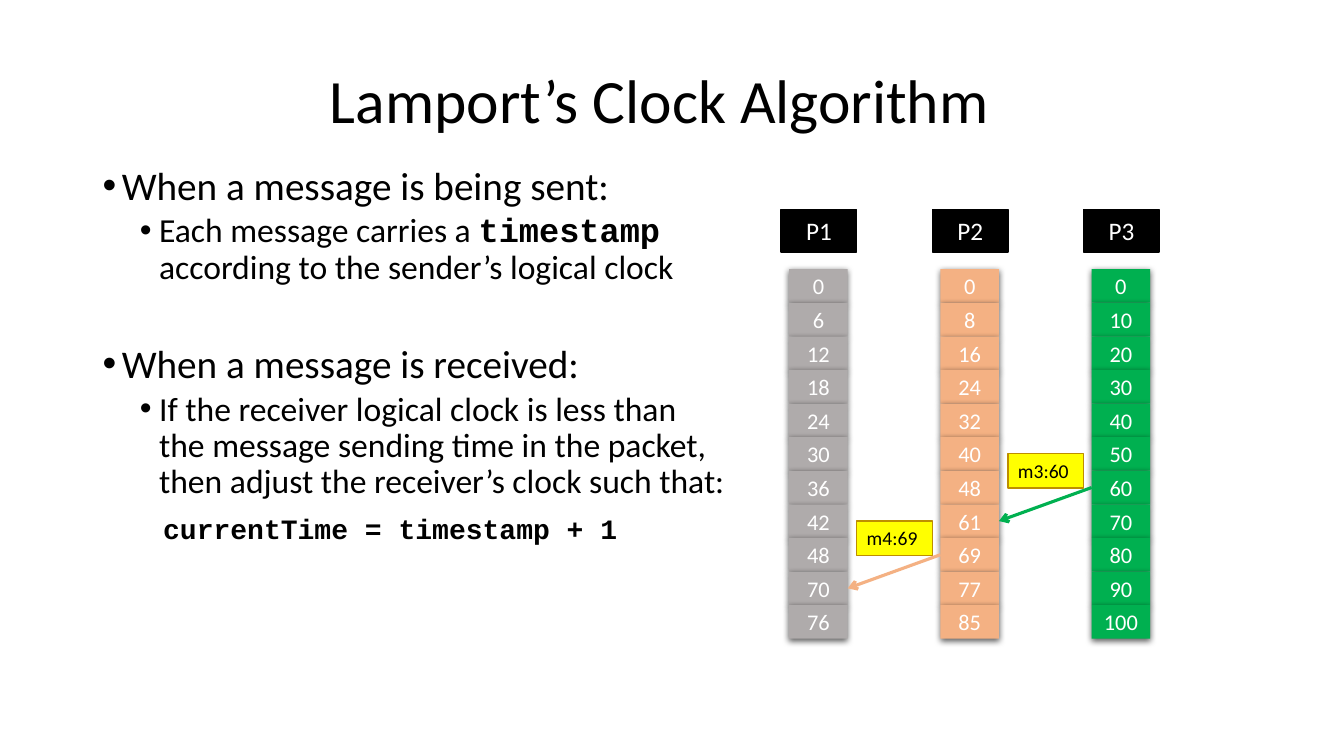
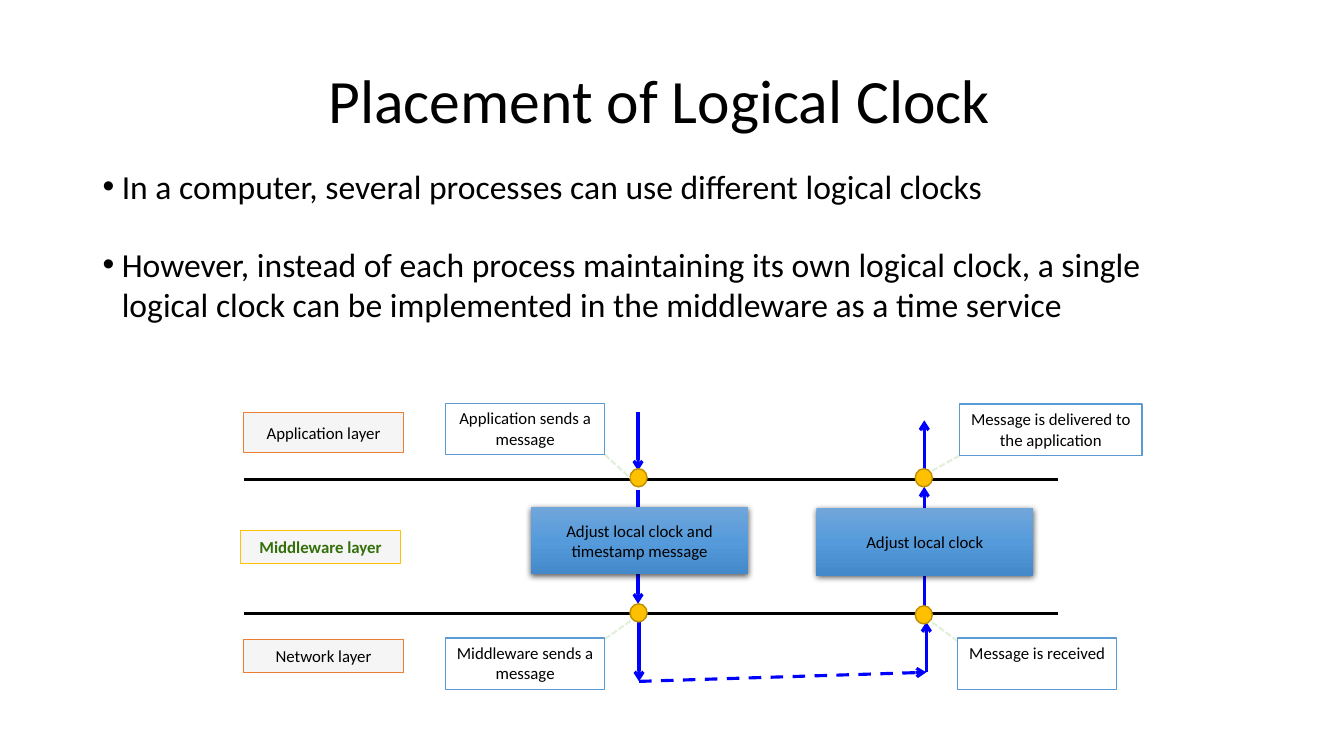
"""Build two slides on Lamport's logical clocks."""
from dataclasses import dataclass

from lxml import etree
from pptx import Presentation
from pptx.dml.color import RGBColor
from pptx.enum.dml import MSO_LINE
from pptx.enum.shapes import MSO_CONNECTOR, MSO_SHAPE
from pptx.enum.text import MSO_ANCHOR, PP_ALIGN
from pptx.oxml.ns import qn
from pptx.shapes.autoshape import Shape
from pptx.shapes.connector import Connector
from pptx.slide import Slide
from pptx.util import Emu, Inches, Pt

RECT, OVAL = MSO_SHAPE.RECTANGLE, MSO_SHAPE.OVAL
STRAIGHT = MSO_CONNECTOR.STRAIGHT
LEFT, CENTER = PP_ALIGN.LEFT, PP_ALIGN.CENTER
TOP, MIDDLE = MSO_ANCHOR.TOP, MSO_ANCHOR.MIDDLE
DASH, DOTS = MSO_LINE.DASH, MSO_LINE.SQUARE_DOT

SANS, MONO = "Calibri", "Courier New"
BLACK, WHITE, BLUE = "000000", "FFFFFF", "0000FF"
GOLD, OCHRE, ORANGE = "FFC000", "BD8E00", "ED7D31"
GRAY, PEACH, GREEN = "AFABAB", "F4B183", "00B050"
PALE, YELLOW, SKY = "F5F5F5", "FFFF00", "5B9BD5"
MOSS, MINT = "336F0A", "E2F0D9"
GRADE = ((0, "71A6DB"), (50, "559BDB"), (100, "448ACA"))
HANG = 0.19


@dataclass(frozen=True)
class Span:
    text: str
    code: bool = False


@dataclass(frozen=True)
class Item:
    spans: tuple[Span, ...]
    size: float
    left: float = HANG
    before: float = 0
    bullet: bool = True


@dataclass(frozen=True)
class Box:
    text: str
    x: float
    y: float
    w: float
    h: float
    fill: str | None
    line: str | None = None
    width: float = 1
    size: float = 12
    color: str = BLACK
    bold: bool = False
    align: PP_ALIGN = CENTER
    anchor: MSO_ANCHOR = MIDDLE
    shadow: bool = False
    form: MSO_SHAPE = RECT


@dataclass(frozen=True)
class Line:
    x1: float
    y1: float
    x2: float
    y2: float
    color: str = BLUE
    width: float = 2.25
    dash: MSO_LINE | None = None
    arrow: bool = True


@dataclass(frozen=True)
class Column:
    name: str
    color: str
    ticks: tuple[int, ...]


def rgb(code: str) -> RGBColor:
    return RGBColor.from_string(code)


def style(font, size: float, color: str, bold: bool = False, face: str = SANS) -> None:
    font.name, font.size, font.bold = face, Pt(size), bold
    font.color.rgb = rgb(color)


def cast(shape: Shape) -> None:
    effects = shape._element.spPr.find(qn("a:effectLst"))
    outer = etree.SubElement(effects, qn("a:outerShdw"), blurRad=str(Pt(4.5)),
                             dist=str(Pt(1.5)), dir="5400000", algn="ctr", rotWithShape="0")
    tint = etree.SubElement(outer, qn("a:srgbClr"), val=BLACK)
    etree.SubElement(tint, qn("a:alpha"), val="63000")


def grade(shape: Shape) -> None:
    grad = etree.Element(qn("a:gradFill"), rotWithShape="1")
    stops = etree.SubElement(grad, qn("a:gsLst"))
    for place, code in GRADE:
        stop = etree.SubElement(stops, qn("a:gs"), pos=str(place * 1000))
        etree.SubElement(stop, qn("a:srgbClr"), val=code)
    etree.SubElement(grad, qn("a:lin"), ang="5400000", scaled="0")
    shape._element.spPr.find(qn("a:prstGeom")).addnext(grad)


def draw(slide: Slide, box: Box) -> Shape:
    shape = slide.shapes.add_shape(box.form, Inches(box.x), Inches(box.y),
                                   Inches(box.w), Inches(box.h))
    shape.shadow.inherit = False
    if box.fill:
        shape.fill.solid()
        shape.fill.fore_color.rgb = rgb(box.fill)
    else:
        grade(shape)
    if box.line:
        shape.line.color.rgb = rgb(box.line)
        shape.line.width = Pt(box.width)
    else:
        shape.line.fill.background()
    if box.shadow:
        cast(shape)
    if box.text:
        frame = shape.text_frame
        frame.word_wrap, frame.vertical_anchor = True, box.anchor
        para = frame.paragraphs[0]
        para.text, para.alignment = box.text, box.align
        style(para.font, box.size, box.color, box.bold)
    return shape


def link(slide: Slide, line: Line) -> Connector:
    ends = (Inches(v) for v in (line.x1, line.y1, line.x2, line.y2))
    wire = slide.shapes.add_connector(STRAIGHT, *ends)
    wire.line.color.rgb = rgb(line.color)
    wire.line.width = Pt(line.width)
    if line.dash:
        wire.line.dash_style = line.dash
    props = wire._element.spPr
    if line.arrow:
        etree.SubElement(props.find(qn("a:ln")), qn("a:tailEnd"), type="arrow")
    etree.SubElement(props, qn("a:effectLst"))
    return wire


def head(slide: Slide, text: str) -> None:
    frame = slide.shapes.add_textbox(Inches(1.92), Inches(0.3), Inches(9.25),
                                     Inches(1.45)).text_frame
    frame.word_wrap, frame.vertical_anchor = True, MIDDLE
    para = frame.paragraphs[0]
    para.text, para.alignment, para.line_spacing = text, CENTER, 0.9
    style(para.font, 44, BLACK)


def body(slide: Slide, items: list[Item], w: float, h: float, space: float) -> None:
    frame = slide.shapes.add_textbox(Inches(0.92), Inches(1.6), Inches(w),
                                     Inches(h)).text_frame
    frame.word_wrap = True
    for i, item in enumerate(items):
        para = frame.add_paragraph() if i else frame.paragraphs[0]
        props = para._p.get_or_add_pPr()
        props.set("marL", str(Inches(item.left)))
        if item.bullet:
            props.set("indent", str(-Inches(HANG)))
            etree.SubElement(props, qn("a:buFont"), typeface="Arial")
            etree.SubElement(props, qn("a:buChar"), char="•")
        para.line_spacing, para.space_before = space, Pt(item.before)
        for span in item.spans:
            para.add_run().text = span.text
        if len({span.code for span in item.spans}) == 1:
            code = item.spans[0].code
            style(para.font, item.size, BLACK, code, MONO if code else SANS)
        else:
            for run, span in zip(para.runs, item.spans):
                style(run.font, item.size, BLACK, span.code, MONO if span.code else SANS)


def clocks(slide: Slide) -> None:
    head(slide, "Lamport’s Clock Algorithm")
    body(slide, [
        Item((Span("When a message is being sent:"),), 28),
        Item((Span("Each message carries a "), Span("timestamp", True),
              Span(" according to the sender’s logical clock")), 24, 0.56, 3.8),
        Item((Span("When a message is received:"),), 28, before=41.4),
        Item((Span("If the receiver logical clock is less than the message sending time "
                   "in the packet, then adjust the receiver’s clock such that:"),),
             24, 0.56, 3.8),
        Item((Span("currentTime = timestamp + 1", True),), 20, 0.6, 10.5, False),
    ], 6.41, 5.42, 0.9)
    columns = (
        Column("P1", GRAY, (*range(0, 49, 6), 70, 76)),
        Column("P2", PEACH, (*range(0, 49, 8), 61, 69, 77, 85)),
        Column("P3", GREEN, tuple(range(0, 101, 10))),
    )
    pitch = 1 / 3
    cells = {}
    for i, col in enumerate(columns):
        x = 7.75 + 1.5 * i
        draw(slide, Box(col.name, x, 2.08, 0.75, 0.42, BLACK, BLACK, size=18, color=WHITE))
        for row, tick in enumerate(col.ticks):
            cells[col.name, tick] = draw(slide, Box(
                str(tick), x + 0.08, 2.67 + row * pitch, 0.58, pitch, col.color,
                size=16, color=WHITE, shadow=True))
    for text, x, y, start, end, color in (
        ("m3:60", 10, 4.5, ("P3", 60), ("P2", 61), GREEN),
        ("m4:69", 8.5, 5.17, ("P2", 69), ("P1", 70), PEACH),
    ):
        wire = link(slide, Line(x + 0.83, y + 0.33, x - 0.08, y + 0.67, color))
        wire.begin_connect(cells[start], 1)
        wire.end_connect(cells[end], 3)
        draw(slide, Box(text, x, y, 0.75, 0.34, YELLOW, OCHRE, size=14,
                        align=LEFT, anchor=TOP))


def layers(slide: Slide) -> None:
    head(slide, "Placement of Logical Clock")
    body(slide, [
        Item((Span("In a computer, several processes can use different logical clocks"),), 24),
        Item((Span("However, instead of each process maintaining its own logical clock, "
                   "a single logical clock can be implemented in the middleware as a "
                   "time service"),), 24, before=26.4),
    ], 11.33, 4.95, 1)
    for box in (
        Box("Application layer", 2.42, 4.09, 1.58, 0.4, PALE, ORANGE, 0.75),
        Box("Middleware layer", 2.39, 5.26, 1.58, 0.33, PALE, GOLD, 0.75,
            color=MOSS, bold=True),
        Box("Network layer", 2.42, 6.34, 1.58, 0.33, PALE, ORANGE, 0.75),
    ):
        draw(slide, box)
    for y in (4.76, 6.09):
        link(slide, Line(2.42, y, 10.5, y, BLACK, arrow=False))
    for x, y1, y2 in (
        (6.33, 4.09, 4.67), (6.33, 4.86, 5.99), (6.34, 6.17, 6.76),
        (9.19, 6.67, 6.17), (9.17, 6.01, 4.83), (9.17, 4.65, 4.17),
    ):
        link(slide, Line(x, y1, x, y2))
    link(slide, Line(6.34, 6.76, 9.19, 6.67, dash=DASH))
    for x, y in ((6.25, 4.65), (6.25, 5.99), (9.08, 4.65), (9.08, 6.01)):
        draw(slide, Box("", x, y, 0.17, 0.18, GOLD, OCHRE, form=OVAL))
    for text, x, y in (
        ("Adjust local clock and timestamp message", 5.27, 5.03),
        ("Adjust local clock", 8.1, 5.04),
    ):
        draw(slide, Box(text, x, y, 2.15, 0.67, None, shadow=True))
    for ends in (
        (6, 4.51, 6.25, 4.74), (6, 6.34, 6.27, 6.15),
        (9.5, 6.36, 9.23, 6.16), (9.52, 4.52, 9.23, 4.68),
    ):
        link(slide, Line(*ends, MINT, 1.5, DOTS, False))
    for text, x, y, w in (
        ("Application sends a message", 4.42, 4, 1.58),
        ("Middleware sends a message", 4.42, 6.33, 1.58),
        ("Message is received", 9.5, 6.33, 1.58),
        ("Message is delivered to the application", 9.52, 4.01, 1.81),
    ):
        draw(slide, Box(text, x, y, w, 0.51, WHITE, SKY, anchor=TOP))


def main() -> None:
    deck = Presentation()
    deck.slide_width, deck.slide_height = Emu(12192000), Inches(7.5)
    for build in (clocks, layers):
        build(deck.slides.add_slide(deck.slide_layouts[6]))
    deck.save("out.pptx")


if __name__ == "__main__":
    main()
